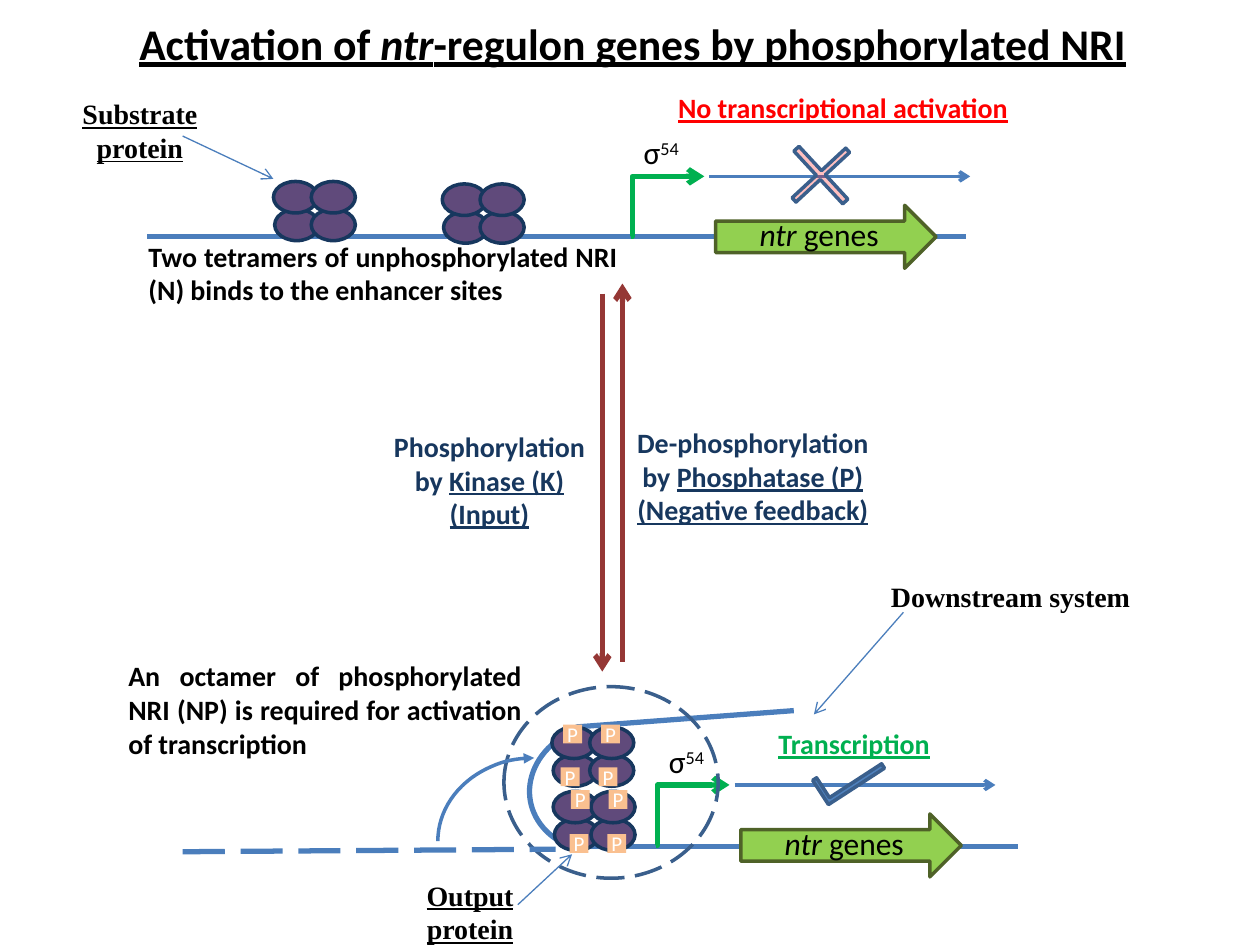
from dataclasses import dataclass

from lxml import etree
from pptx import Presentation
from pptx.dml.color import RGBColor
from pptx.enum.dml import MSO_LINE
from pptx.enum.shapes import MSO_CONNECTOR, MSO_SHAPE
from pptx.enum.text import MSO_ANCHOR, PP_ALIGN
from pptx.oxml.ns import qn
from pptx.util import Emu, Pt

PX = 9144  # 100 px to the inch
STRAIGHT, ELBOW = MSO_CONNECTOR.STRAIGHT, MSO_CONNECTOR.ELBOW
OVAL, RECTANGLE, ARC = MSO_SHAPE.OVAL, MSO_SHAPE.RECTANGLE, MSO_SHAPE.ARC
GENE_ARROW, CROSS = MSO_SHAPE.RIGHT_ARROW, MSO_SHAPE.CROSS
CORNER = MSO_SHAPE.from_xml("corner")
LEFT, CENTER, JUSTIFY = PP_ALIGN.LEFT, PP_ALIGN.CENTER, PP_ALIGN.JUSTIFY
LONG_DASH = MSO_LINE.LONG_DASH
TOP, MIDDLE = MSO_ANCHOR.TOP, MSO_ANCHOR.MIDDLE
TITLE_ONLY = 5


@dataclass(frozen=True)
class Theme:
    sans: str = "Calibri"
    serif: str = "Times New Roman"
    title: int = 25
    symbol: int = 18
    label: int = 16
    phosphate_size: int = 12
    black: str = "000000"
    white: str = "FFFFFF"
    red: str = "FF0000"
    green: str = "00B050"
    navy: str = "17375E"
    dna: str = "4B7EBC"
    outline: str = "3A5F8C"
    tick: str = "4F81BD"
    protein: str = "604A7B"
    phosphate: str = "FAC090"
    gene: str = "92D050"
    gene_edge: str = "4F6228"
    reaction: str = "953735"


def px(*lengths):
    return [Emu(length * PX) for length in lengths]


class Diagram:
    def __init__(self, slide, theme):
        self.slide, self.theme = slide, theme

    def _stroke(self, shape, color, width, dash=None, arrow=None):
        line = shape.line
        line.color.rgb = RGBColor.from_string(color)
        line.width = Pt(width)
        if dash:
            line.dash_style = dash
        if arrow:
            outline = shape.element.spPr.find(qn("a:ln"))
            etree.SubElement(outline, qn("a:tailEnd"), type=arrow)

    def _write(self, shape, paragraphs, size, color, font=None, bold=False,
               align=LEFT, wrap=True, anchor=TOP):
        """Fill a shape with paragraphs, each a list of (text, marks) runs.

        Marks are letters: i italic, u underlined, s superscript.
        """
        frame = shape.text_frame
        frame.word_wrap, frame.vertical_anchor = wrap, anchor
        for index, runs in enumerate(paragraphs):
            paragraph = frame.add_paragraph() if index else frame.paragraphs[0]
            paragraph.alignment = align
            for text, marks in runs:
                run = paragraph.add_run()
                run.text = text
                run.font.name, run.font.size = font or self.theme.sans, Pt(size)
                run.font.color.rgb = RGBColor.from_string(color)
                run.font.bold = bold
                run.font.italic, run.font.underline = "i" in marks, "u" in marks
                if "s" in marks:
                    run.font._element.set("baseline", "30000")

    def title(self, box, runs):
        shape = self.slide.shapes.title
        shape.left, shape.top, shape.width, shape.height = px(*box)
        self._write(shape, [runs], self.theme.title, self.theme.black, bold=True,
                    align=CENTER, wrap=False)

    def text(self, box, paragraphs, size, color, **style):
        shape = self.slide.shapes.add_textbox(*px(*box))
        self._write(shape, paragraphs, size, color, **style)

    def label(self, box, paragraphs, color=None, **style):
        self.text(box, paragraphs, self.theme.label, color or self.theme.black,
                  bold=True, **style)

    def line(self, start, end, width, color=None, kind=STRAIGHT, **style):
        connector = self.slide.shapes.add_connector(kind, *px(*start, *end))
        self._stroke(connector, color or self.theme.dna, width, **style)
        etree.SubElement(connector.element.spPr, qn("a:effectLst"))
        return connector

    def shape(self, kind, box, fill=None, edge=None, width=2, rotation=0,
              adjustments=(), alpha=None, **style):
        shape = self.slide.shapes.add_shape(kind, *px(*box))
        shape.shadow.inherit = False
        shape.rotation = rotation
        for index, value in enumerate(adjustments):
            shape.adjustments[index] = value
        if fill:
            shape.fill.solid()
            shape.fill.fore_color.rgb = RGBColor.from_string(fill)
        else:
            shape.fill.background()
        if alpha:
            color = shape.element.spPr.find(qn("a:solidFill"))[0]
            etree.SubElement(color, qn("a:alpha"), val=str(alpha * 1000))
        if edge:
            self._stroke(shape, edge, width, **style)
        else:
            shape.line.fill.background()
        return shape

    def tetramer(self, left, top):
        for dx, dy in ((1, 22), (30, 22), (0, 0), (30, 0)):
            self.shape(OVAL, (left + dx, top + dy, 35, 25), self.theme.protein, self.theme.navy)

    def phosphate(self, left, top):
        shape = self.shape(RECTANGLE, (left, top, 15, 15), self.theme.phosphate)
        frame = shape.text_frame
        frame.margin_left = frame.margin_right = frame.margin_top = frame.margin_bottom = 0
        self._write(shape, [[("P", "")]], self.theme.phosphate_size, self.theme.white,
                    align=CENTER, wrap=False, anchor=MIDDLE)

    def promoter(self, left, top):
        """Gene, sigma factor and transcript, placed from the corner of the sigma label."""
        theme = self.theme
        self.shape(GENE_ARROW, (left + 67, top + 62, 175, 50), theme.gene, theme.gene_edge)
        self.text((left + 92, top + 65, 116, 40), [[("ntr", "i"), (" genes", "")]],
                  theme.symbol, theme.black, wrap=False)
        start = self.line((left, top + 87), (left + 58, top + 39), 3, theme.green,
                          ELBOW, arrow="arrow")
        guides = start.element.spPr.find(qn("a:prstGeom")).find(qn("a:avLst"))
        etree.SubElement(guides, qn("a:gd"), name="adj1", fmla="val 1400")
        self.text((left, top, 51, 40), [[("σ", ""), ("54", "s")]],
                  theme.symbol, theme.black, wrap=False)
        self.line((left + 62, top + 39), (left + 269, top + 39), 2, arrow="arrow")


def draw_unphosphorylated(diagram, theme):
    diagram.line((117, 188), (767, 188), 3)
    diagram.promoter(501, 101)
    diagram.tetramer(217, 144)
    diagram.tetramer(351, 146)
    diagram.label((108, 185, 392, 64), [[(
        "Two tetramers of unphosphorylated NRI (N) binds to the enhancer sites", "")]],
        align=JUSTIFY)
    diagram.shape(CROSS, (623, 110, 57, 58), theme.red, theme.outline,
                  rotation=47.2, adjustments=[0.46], alpha=25)
    diagram.label((517, 67, 304, 37), [[("No transcriptional activation", "u")]],
                  theme.red, align=CENTER)


def draw_phosphorylated(diagram, theme):
    diagram.line((452, 672), (808, 672), 3)
    diagram.promoter(521, 584)
    diagram.shape(ARC, (430, 564, 102, 122), edge=theme.dna, width=3,
                  rotation=259.9, adjustments=[130.56, 209.7])
    diagram.line((457, 577), (630, 564), 3)
    diagram.shape(OVAL, (400, 545, 170, 152), edge=theme.outline, dash=LONG_DASH)
    diagram.label((92, 518, 332, 91), [[(
        "An octamer of phosphorylated NRI (NP) is required for activation of transcription",
        "")]], align=JUSTIFY)
    diagram.tetramer(438, 577)
    diagram.tetramer(439, 628)
    diagram.shape(CORNER, (647, 603, 53, 23), theme.tick, theme.outline,
                  rotation=327, adjustments=[0.18, 0.16])
    diagram.line((145, 676), (441, 674), 3, dash=LONG_DASH)
    diagram.shape(ARC, (358, 591, 132, 153), edge=theme.dna, rotation=270, arrow="triangle")
    diagram.label((608, 572, 142, 37), [[("Transcription", "u")]], theme.green, align=JUSTIFY)
    for left, top in ((447, 575), (445, 609), (453, 627), (452, 662)):
        diagram.phosphate(left, top)
        diagram.phosphate(left + 30, top)


def draw_reactions(diagram, theme):
    diagram.line((478, 233), (478, 533), 3, theme.reaction, arrow="arrow")
    diagram.line((494, 525), (494, 225), 3, theme.reaction, arrow="arrow")
    for box, reaction, enzyme, role in (
            ((302, 336, 173, 91), "Phosphorylation", "Kinase (K)", "(Input)"),
            ((483, 333, 229, 91), "De-phosphorylation", "Phosphatase (P)",
             "(Negative feedback)")):
        diagram.label(box, [[(reaction, "")], [("by ", ""), (enzyme, "u")], [(role, "u")]],
                      theme.navy, align=CENTER)


def draw_callouts(diagram, theme):
    for box, text, marks, start, end in (
            ((55, 72, 112, 64), "Substrate protein", "u", (145, 108), (217, 142)),
            ((317, 692, 112, 64), "Output protein", "u", (411, 718), (454, 678)),
            ((696, 455, 212, 37), "Downstream system", "", (717, 486), (646, 567))):
        diagram.line(start, end, 0.75, arrow="arrow")
        diagram.label(box, [[(text, marks)]], font=theme.serif, align=CENTER)


def main():
    presentation = Presentation()
    presentation.slide_width, presentation.slide_height = px(1000, 750)
    slide = presentation.slides.add_slide(presentation.slide_layouts[TITLE_ONLY])
    theme = Theme()
    diagram = Diagram(slide, theme)
    diagram.title((96, 8, 812, 52), [("Activation of ", "u"), ("ntr", "iu"),
                                     ("-regulon genes by phosphorylated NRI", "u")])
    draw_unphosphorylated(diagram, theme)
    draw_phosphorylated(diagram, theme)
    draw_reactions(diagram, theme)
    draw_callouts(diagram, theme)
    presentation.save("out.pptx")


if __name__ == "__main__":
    main()
